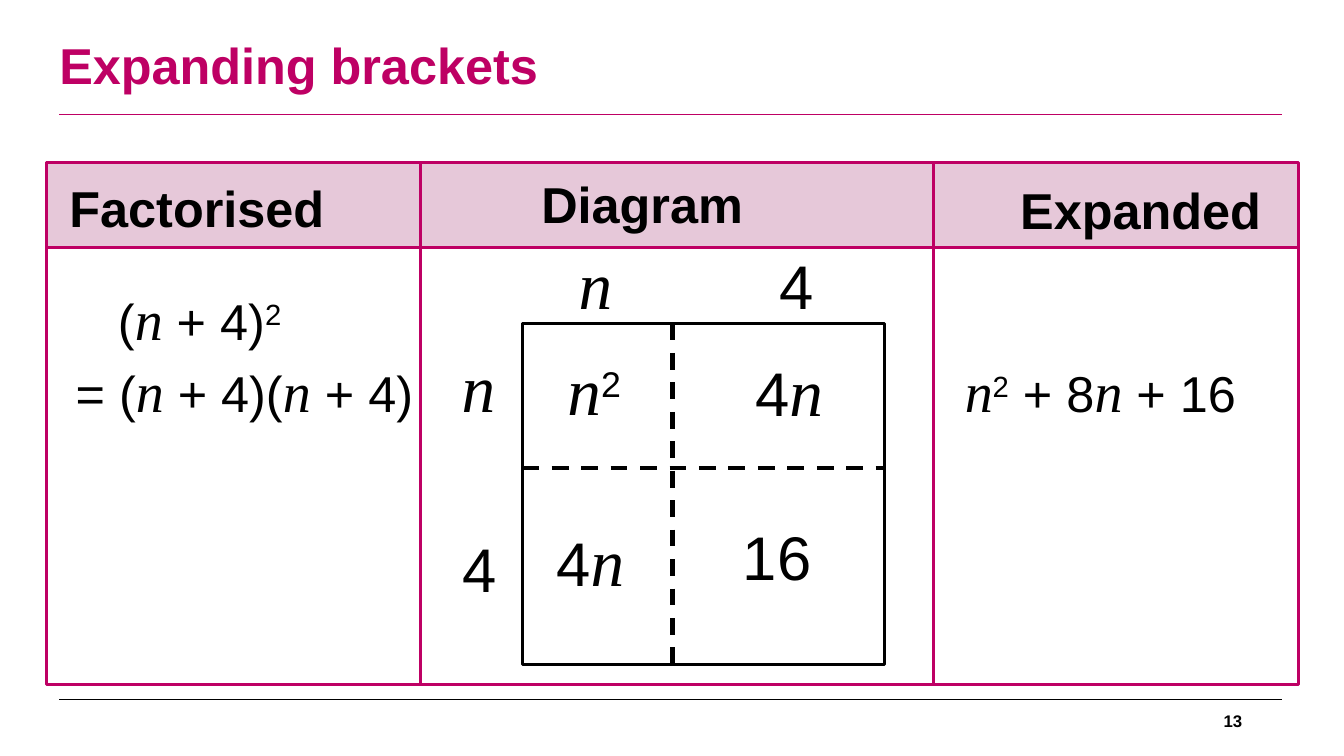
import itertools

import lxml.etree
import pptx
import pptx.dml.color
import pptx.enum.dml
import pptx.enum.shapes
import pptx.enum.text
import pptx.oxml.ns
import pptx.util

Inches = pptx.util.Inches
Pt = pptx.util.Pt
ALIGN = pptx.enum.text.PP_ALIGN
ANCHOR = pptx.enum.text.MSO_ANCHOR

PINK = "BE0064"
PALE_PINK = "E6C8D9"
BLACK = "000000"


def color(hex_string):
    return pptx.dml.color.RGBColor.from_string(hex_string)


def add_text(slide, box, text, size=36, fill=BLACK, bold=False, algebra=False,
             align=ALIGN.LEFT, anchor=ANCHOR.TOP, spacing=None, after=0, grow=True):
    """Add a text box; in algebra, n is an italic variable and ² a superscript."""
    shape = slide.shapes.add_textbox(*map(Inches, box))
    frame = shape.text_frame
    frame.word_wrap = True
    frame.vertical_anchor = anchor
    if grow:
        frame.auto_size = pptx.enum.text.MSO_AUTO_SIZE.SHAPE_TO_FIT_TEXT
    paragraph = frame.paragraphs[0]
    paragraph.alignment = align
    paragraph.space_after = Pt(after)
    if spacing:
        paragraph.line_spacing = spacing

    def kind(letter):
        return letter if algebra and letter in "n²" else "plain"

    for part, letters in itertools.groupby(text, kind):
        run = paragraph.add_run()
        run.text = "".join(letters).replace("²", "2")
        variable = part == "n"
        run.font.name = "Times New Roman" if variable else "Arial"
        run.font.size = Pt(size + 4 if variable else size)
        run.font.italic = variable
        run.font.bold = bold
        run.font.color.rgb = color(fill)
        if part == "²":
            run.font._element.set("baseline", "30000")


def add_line(slide, start, end, stroke, width, dashed=False):
    line = slide.shapes.add_connector(
        pptx.enum.shapes.MSO_CONNECTOR.STRAIGHT, *map(Inches, start + end))
    line.line.color.rgb = color(stroke)
    line.line.width = Pt(width)
    if dashed:
        line.line.dash_style = pptx.enum.dml.MSO_LINE.DASH
    lxml.etree.SubElement(line._element.spPr, pptx.oxml.ns.qn("a:effectLst"))


def add_rectangle(slide, box, stroke, fill=None):
    shape = slide.shapes.add_shape(
        pptx.enum.shapes.MSO_SHAPE.RECTANGLE, *map(Inches, box))
    shape.shadow.inherit = False
    shape.line.color.rgb = color(stroke)
    shape.line.width = Pt(2.25)
    if fill:
        shape.fill.solid()
        shape.fill.fore_color.rgb = color(fill)
    else:
        shape.fill.background()


def add_title(slide, left, top, width):
    add_text(slide, (left - 0.1, top, 10, 1.11), "Expanding brackets", fill=PINK,
             bold=True, anchor=ANCHOR.MIDDLE, spacing=0.9, grow=False)
    add_line(slide, (left, top + 1.02), (left + width, top + 1.02), PINK, 0.75)


def add_footer(slide, left, top, width):
    add_line(slide, (left, top), (left + width, top), BLACK, 0.75)
    add_text(slide, (left + width - 3.3, top + 0.01, 3, 0.4), "13", size=12, bold=True,
             align=ALIGN.RIGHT, anchor=ANCHOR.MIDDLE, grow=False)


def add_columns(slide, left, top, width, height):
    header_height = 0.85
    # Header band and body frame
    add_rectangle(slide, (left, top, width, header_height), PINK, PALE_PINK)
    add_rectangle(slide, (left, top + header_height, width, height - header_height), PINK)
    # Column dividers
    for offset in (3.71, 8.8):
        add_line(slide, (left + offset, top), (left + offset, top + height), PINK, 2.25)
    # Headings
    for heading, x, y in (("Factorised", 0.13, 0.1), ("Diagram", 4.81, 0.06),
                          ("Expanded", 9.56, 0.12)):
        add_text(slide, (left + x, top + y, 3.31, 0.71), heading, bold=True)
    # Expressions on either side of the diagram
    for expression, x, y, box_width, align in (
            ("(n + 4)²", 0.26, 1.4, 2.52, ALIGN.CENTER),
            ("= (n + 4)(n + 4)", 0, 2.11, 3.93, ALIGN.CENTER),
            ("n² + 8n + 16", 9.01, 2.11, 3.22, ALIGN.LEFT)):
        add_text(slide, (left + x, top + y, box_width, 0.56), expression, algebra=True,
                 align=align, spacing=Pt(31), after=6)


def add_area_diagram(slide, left, top, width, height):
    # Square split into four areas
    split_x, split_y = left + 1.49, top + 1.43
    add_line(slide, (split_x, top), (split_x, top + height), BLACK, 3, dashed=True)
    add_line(slide, (left, split_y), (left + width, split_y), BLACK, 3, dashed=True)
    add_rectangle(slide, (left, top, width, height), BLACK)
    # Side lengths, then areas
    for label, x, y in (
            ("n", 0.46, -0.86), ("4", 2.45, -0.8),
            ("n", -0.7, 0.17), ("4", -0.69, 2.01),
            ("n²", 0.35, 0.2), ("4n", 2.21, 0.21),
            ("4n", 0.24, 1.89), ("16", 2.09, 1.89)):
        label_height = 0.91 if "n" in label else 0.84
        add_text(slide, (left + x, top + y, 1.06, label_height), label, size=44,
                 algebra=True)


def main():
    presentation = pptx.Presentation()
    presentation.slide_width = Inches(13.33)
    presentation.slide_height = Inches(7.5)
    slide = presentation.slides.add_slide(presentation.slide_layouts[6])
    add_title(slide, 0.59, 0.12, 12.13)
    add_columns(slide, 0.46, 1.61, 12.42, 5.18)
    add_area_diagram(slide, 5.18, 3.21, 3.59, 3.38)
    add_footer(slide, 0.59, 6.94, 12.13)
    presentation.save("out.pptx")


if __name__ == "__main__":
    main()
